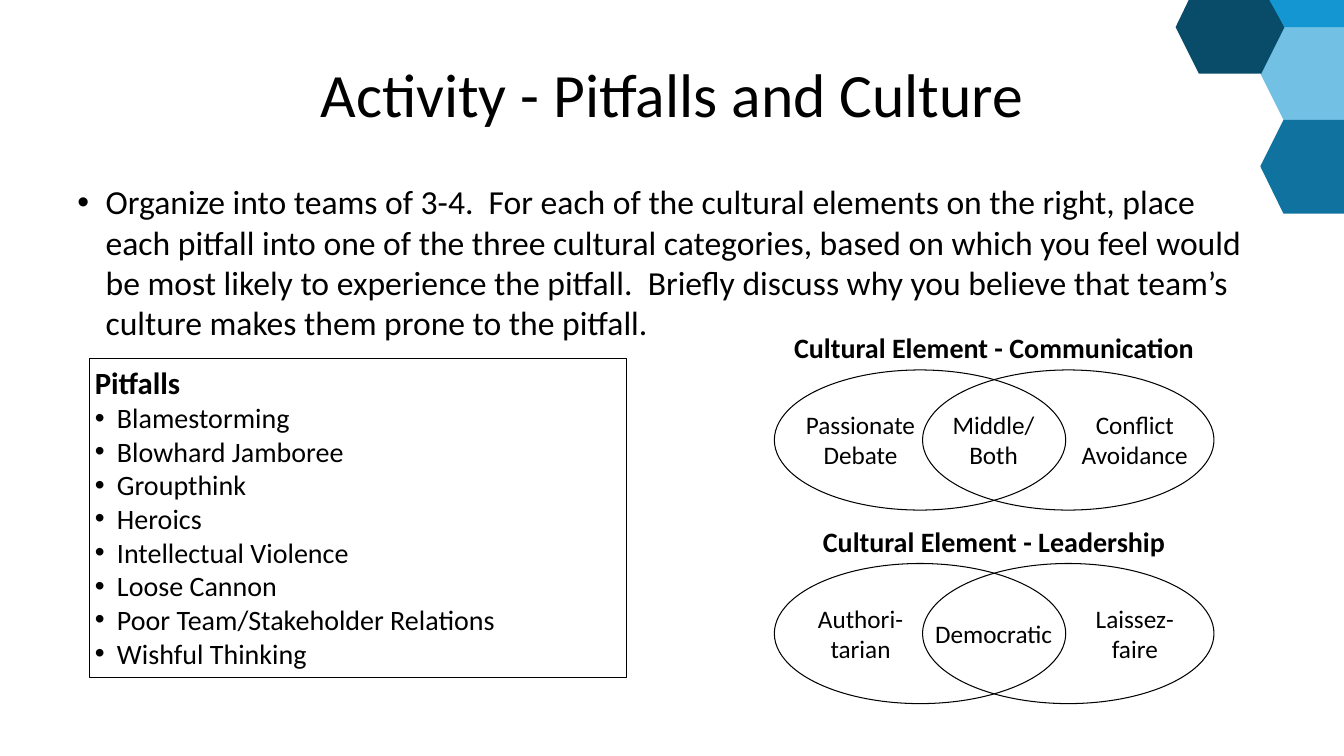
from lxml.etree import SubElement
from pptx import Presentation
from pptx.dml.color import RGBColor
from pptx.enum.shapes import MSO_SHAPE
from pptx.enum.text import MSO_ANCHOR, PP_ALIGN
from pptx.oxml.ns import qn
from pptx.util import Inches, Pt

BLACK = RGBColor(0x00, 0x00, 0x00)
LIGHT_BLUE = RGBColor(0x72, 0xC0, 0xE3)
MID_BLUE = RGBColor(0x10, 0x72, 0x9E)
DARK_BLUE = RGBColor(0x09, 0x4C, 0x6A)
BRIGHT_BLUE = RGBColor(0x13, 0x96, 0xD1)

HEXAGONS = [
    (LIGHT_BLUE, [(12.5, 0.73), (12.73, 0.26), (13.33, 0.26), (13.33, 1.19), (12.73, 1.19)]),
    (MID_BLUE, [(12.5, 1.65), (12.73, 1.19), (13.33, 1.19), (13.33, 2.12), (12.73, 2.12)]),
    (DARK_BLUE, [(11.66, 0.27), (11.79, 0), (12.61, 0), (12.74, 0.27), (12.51, 0.73), (11.89, 0.73)]),
    (BRIGHT_BLUE, [(12.59, 0), (13.33, 0), (13.33, 0.27), (12.74, 0.27)]),
]

INSTRUCTIONS = (
    "Organize into teams of 3-4.  For each of the cultural elements on the right, "
    "place each pitfall into one of the three cultural categories, based on which "
    "you feel would be most likely to experience the pitfall.  Briefly discuss why "
    "you believe that team’s culture makes them prone to the pitfall."
)

PITFALLS = [
    "Blamestorming", "Blowhard Jamboree", "Groupthink", "Heroics",
    "Intellectual Violence", "Loose Cannon", "Poor Team/Stakeholder Relations",
    "Wishful Thinking",
]

# Heading, then the left, middle and right labels
CULTURAL_ELEMENTS = [
    ("Cultural Element - Communication", ["Passionate\nDebate", "Middle/\nBoth", "Conflict\nAvoidance"]),
    ("Cultural Element - Leadership", ["Authori-\ntarian", "Democratic", "Laissez-\nfaire"]),
]
LABEL_LEFTS = [7.81, 9.13, 10.53]
FIRST_VENN_TOP = 3.67
VENN_STEP = 1.92


def write_text(frame, text, size, bold=False, align=PP_ALIGN.LEFT, hanging=None):
    """Write each line as a paragraph; hanging is the bullet indent in inches."""
    for line in text.split("\n"):
        is_first = len(frame.paragraphs) == 1 and not frame.paragraphs[0].runs
        para = frame.paragraphs[0] if is_first else frame.add_paragraph()
        para.alignment = align
        if hanging:
            properties = para._p.get_or_add_pPr()
            properties.set("marL", str(Inches(hanging)))
            properties.set("indent", str(-Inches(hanging)))
            SubElement(properties, qn("a:buFont"), typeface="Arial")
            SubElement(properties, qn("a:buChar"), char="•")
        span = para.add_run()
        span.text = line
        span.font.name = "Calibri"
        span.font.size = Pt(size)
        span.font.bold = bold
        span.font.color.rgb = BLACK


class Page:
    def __init__(self, slide):
        self.shapes = slide.shapes

    def hexagon(self, color, points):
        corners = [(Inches(x), Inches(y)) for x, y in points]
        builder = self.shapes.build_freeform(*corners[0])
        builder.add_line_segments(corners[1:], close=True)
        shape = builder.convert_to_shape()
        shape.shadow.inherit = False
        shape.fill.solid()
        shape.fill.fore_color.rgb = color
        shape.line.fill.background()

    def outline(self, kind, left, top, width, height):
        shape = self.shapes.add_shape(
            kind, Inches(left), Inches(top), Inches(width), Inches(height))
        shape.shadow.inherit = False
        shape.fill.background()
        shape.line.color.rgb = BLACK
        shape.line.width = Pt(0.75)
        return shape

    def frame(self, box, inset=0.05, anchor=MSO_ANCHOR.TOP):
        """Prepare the text frame of a box and return it."""
        frame = box.text_frame
        frame.word_wrap = True
        frame.vertical_anchor = anchor
        frame.margin_left = frame.margin_right = Inches(inset)
        frame.margin_top = frame.margin_bottom = Inches(0.05)
        return frame

    def text(self, text, left, top, width, height, size, inset=0.05,
             anchor=MSO_ANCHOR.TOP, **style):
        box = self.shapes.add_textbox(
            Inches(left), Inches(top), Inches(width), Inches(height))
        write_text(self.frame(box, inset, anchor), text, size, **style)

    def venn(self, top, heading, labels):
        for left in (7.68, 9.15):
            self.outline(MSO_SHAPE.OVAL, left, top, 2.89, 1.39)
        for left, label in zip(LABEL_LEFTS, labels):
            self.text(label, left, top + 0.35, 1.45, 0.68, 18,
                      anchor=MSO_ANCHOR.MIDDLE, align=PP_ALIGN.CENTER)
        self.text(heading, 7.26, top - 0.44, 5.2, 0.44, 20,
                  bold=True, align=PP_ALIGN.CENTER)


def main():
    deck = Presentation()
    deck.slide_width = Inches(13.33)
    deck.slide_height = Inches(7.5)
    page = Page(deck.slides.add_slide(deck.slide_layouts[6]))

    for color, points in HEXAGONS:
        page.hexagon(color, points)

    page.text("Activity - Pitfalls and Culture", 0.67, 0.3, 12, 1.25, 44,
              inset=0.1, anchor=MSO_ANCHOR.MIDDLE, align=PP_ALIGN.CENTER)
    page.text(INSTRUCTIONS, 0.67, 1.75, 12, 1.65, 24, inset=0.1, hanging=0.28)

    pitfall_box = page.outline(MSO_SHAPE.RECTANGLE, 0.89, 3.56, 5.32, 3.16)
    pitfall_frame = page.frame(pitfall_box)
    write_text(pitfall_frame, "Pitfalls", 22, bold=True)
    write_text(pitfall_frame, "\n".join(PITFALLS), 20, hanging=0.22)

    for row, (heading, labels) in enumerate(CULTURAL_ELEMENTS):
        page.venn(FIRST_VENN_TOP + row * VENN_STEP, heading, labels)

    deck.save("out.pptx")


if __name__ == "__main__":
    main()
